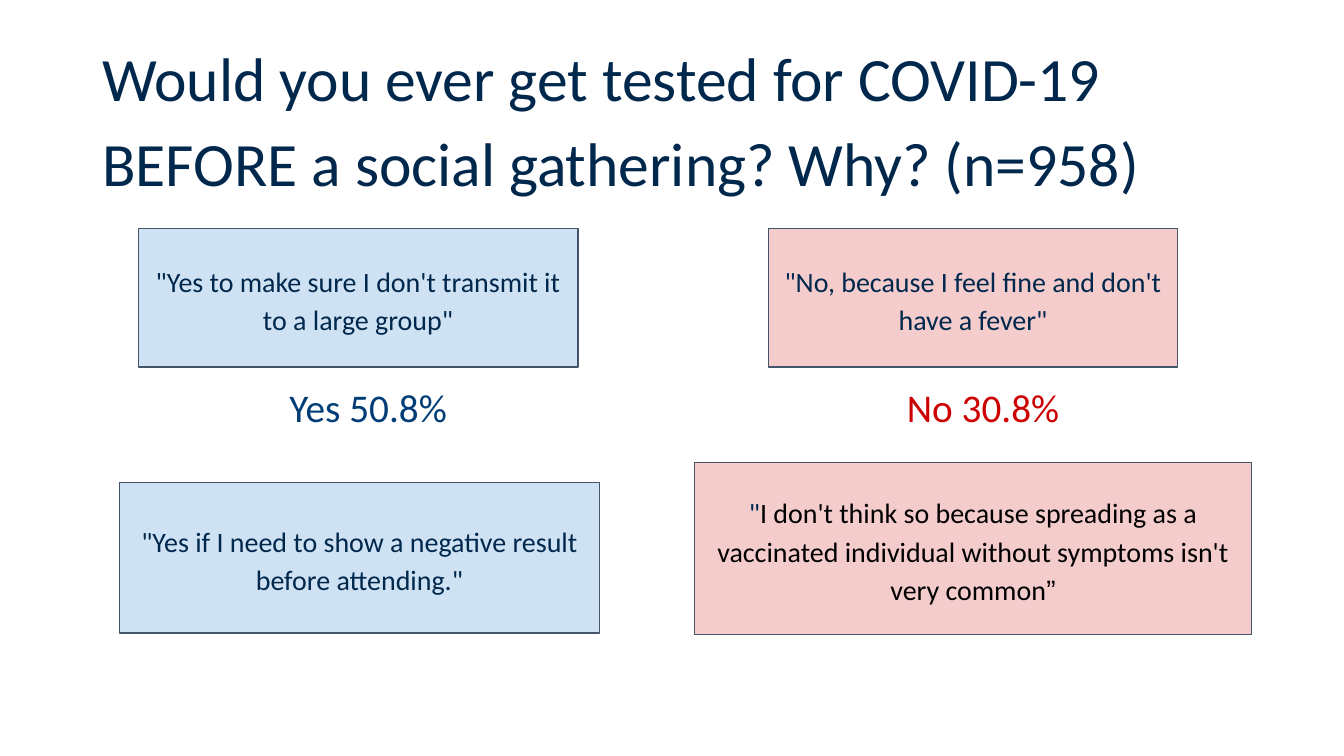
from typing import NamedTuple

from pptx import Presentation
from pptx.dml.color import RGBColor
from pptx.enum.shapes import MSO_SHAPE
from pptx.enum.text import MSO_ANCHOR, PP_ALIGN
from pptx.util import Inches, Pt

SLIDE_WIDTH = 10
SLIDE_HEIGHT = SLIDE_WIDTH * 9 / 16

COLORS = {
    "navy": "00274C",
    "blue": "003D77",
    "red": "CC0000",
    "black": "000000",
    "outline": "44546A",
    "yes_fill": "CFE2F3",
    "no_fill": "F4CCCC",
}


class Box(NamedTuple):
    left: float
    top: float
    width: float
    height: float

    def lengths(self) -> list:
        return [Inches(value) for value in self]


class Run(NamedTuple):
    text: str
    color: str = "navy"
    font: str = "Calibri"


class Quote(NamedTuple):
    box: Box
    fill: str
    tip: tuple[float, float]
    runs: list[Run]


class Label(NamedTuple):
    box: Box
    run: Run


def rgb(name: str) -> RGBColor:
    return RGBColor.from_string(COLORS[name])


def write(shape, runs: list[Run], size: float, spacing: float,
          align=PP_ALIGN.CENTER, anchor=MSO_ANCHOR.MIDDLE,
          inset_x: float = 0.1, inset_y: float = 0.1):
    """Fill the shape with one paragraph and return that paragraph."""
    frame = shape.text_frame
    frame.word_wrap = True
    frame.vertical_anchor = anchor
    frame.margin_left = frame.margin_right = Inches(inset_x)
    frame.margin_top = frame.margin_bottom = Inches(inset_y)
    paragraph = frame.paragraphs[0]
    paragraph.alignment = align
    paragraph.line_spacing = spacing
    for text, color, font in runs:
        run = paragraph.add_run()
        run.text = text
        run.font.name = font
        run.font.size = Pt(size)
        run.font.color.rgb = rgb(color)
    return paragraph


def draw_quote(slide, quote: Quote) -> None:
    callout = slide.shapes.add_shape(
        MSO_SHAPE.ROUNDED_RECTANGULAR_CALLOUT, *quote.box.lengths())
    # Tip position, then square corners
    for index, value in enumerate((*quote.tip, 0)):
        callout.adjustments[index] = value
    callout.shadow.inherit = False
    callout.fill.solid()
    callout.fill.fore_color.rgb = rgb(quote.fill)
    callout.line.color.rgb = rgb("outline")
    callout.line.width = Pt(0.75)
    write(callout, quote.runs, size=15, spacing=1.15)


def draw_label(slide, label: Label) -> None:
    share = slide.shapes.add_textbox(*label.box.lengths())
    paragraph = write(share, [label.run], size=21, spacing=0.9,
                      anchor=MSO_ANCHOR.TOP, inset_x=0.07, inset_y=0.04)
    properties = paragraph._p.get_or_add_pPr()
    properties.set("marL", str(Inches(0.19)))
    properties.set("indent", str(Inches(-0.04)))


QUOTES = [
    Quote(Box(0.89, 3.59, 3.57, 1.12), "yes_fill", (-0.17, -0.5),
          [Run('"Yes if I need to show a negative result before attending."')]),
    Quote(Box(1.03, 1.7, 3.27, 1.03), "yes_fill", (-0.5, -0.27),
          [Run('"Yes to make sure I don\'t transmit it to a large group"')]),
    Quote(Box(5.72, 1.7, 3.04, 1.03), "no_fill", (0.2, -0.5),
          [Run('"No, because I feel fine and don\'t have a fever"')]),
    Quote(Box(5.17, 3.44, 4.14, 1.28), "no_fill", (-0.21, -0.5),
          [Run('"'),
           Run("I don't think so because spreading as a vaccinated individual "
               "without symptoms isn't very common", "black"),
           Run("”", "black", "Arial")]),
]

LABELS = [
    Label(Box(1.71, 2.85, 1.91, 0.4), Run("Yes 50.8%", "blue")),
    Label(Box(6.27, 2.85, 1.94, 0.4), Run("No 30.8%", "red")),
]


def main() -> None:
    deck = Presentation()
    deck.slide_width = Inches(SLIDE_WIDTH)
    deck.slide_height = Inches(SLIDE_HEIGHT)
    slide = deck.slides.add_slide(deck.slide_layouts[6])

    # Survey question
    question = slide.shapes.add_textbox(*Box(0.69, 0.3, 8.62, 1.09).lengths())
    write(question,
          [Run("Would you ever get tested for COVID-19 BEFORE "
               "a social gathering? Why? (n=958)")],
          size=33, spacing=1.15, align=PP_ALIGN.LEFT,
          inset_x=0.07, inset_y=0.04)

    # Sample answers
    for quote in QUOTES:
        draw_quote(slide, quote)

    # Share of each answer
    for label in LABELS:
        draw_label(slide, label)

    deck.save("out.pptx")


if __name__ == "__main__":
    main()
